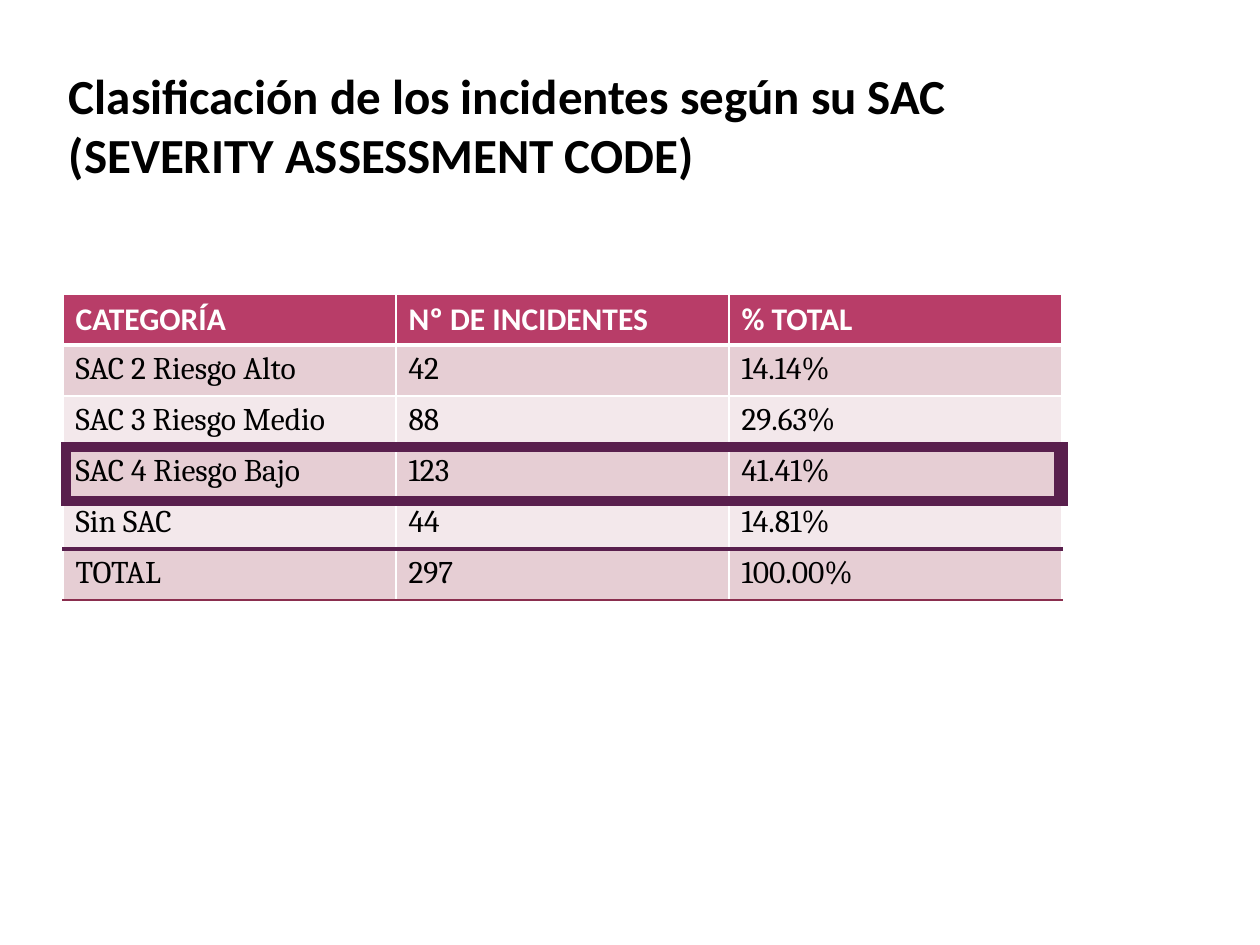
"""Build the slide that classifies incidents by Severity Assessment Code."""
from dataclasses import dataclass

from lxml.etree import SubElement
from pptx import Presentation
from pptx.dml.color import RGBColor
from pptx.oxml.ns import qn
from pptx.util import Emu, Pt

WHITE, BLACK, PLUM = "FFFFFF", "000000", "591F4D"
ROSE, PINK, PALE, WINE = "B83D68", "E6CED4", "F3E8EB", "8A2E4E"
NO_STYLE = "{2D5ABB26-0587-4C30-8999-92F81FD0307C}"


@dataclass(frozen=True)
class Border:
    color: str = WHITE
    points: int = 1


@dataclass(frozen=True)
class Row:
    texts: tuple[str, ...]
    fill: str
    bottom: Border = Border()
    font: str = "Cambria"
    color: str = BLACK
    bold: bool = False


@dataclass(frozen=True)
class Frame:
    left: int
    top: int
    width: int
    height: int
    points: int


STRONG = Border(PLUM, 3)
ROWS = (
    Row(("CATEGORÍA", "Nº DE INCIDENTES", "% TOTAL"), ROSE, Border(WHITE, 3),
        "Calibri", WHITE, True),
    Row(("SAC 2 Riesgo Alto", "42", "14.14%"), PINK),
    Row(("SAC 3 Riesgo Medio", "88", "29.63%"), PALE, STRONG),
    Row(("SAC 4 Riesgo Bajo", "123", "41.41%"), PINK, STRONG),
    Row(("Sin SAC", "44", "14.81%"), PALE, STRONG),
    Row(("TOTAL", "297", "100.00%"), PINK, Border(WINE)),
)
HIGHLIGHTS = (Frame(64, 450, 992, 48, 3), Frame(66, 447, 997, 54, 6))


def px(length: int) -> Emu:
    return Emu(round(length * 914400 / 126))


def rgb(color: str) -> RGBColor:
    return RGBColor.from_string(color)


def write(text_frame, text: str, *, size: int, font: str, color: str, bold: bool) -> None:
    paragraph = text_frame.paragraphs[0]
    run = paragraph.add_run()
    run.text = text
    run.font.size = Pt(size)
    run.font.name = font
    run.font.bold = bold
    run.font.color.rgb = rgb(color)


def set_borders(cell, left: Border, right: Border, top: Border, bottom: Border) -> None:
    properties = cell._tc.get_or_add_tcPr()
    for side, border in zip("LRTB", (left, right, top, bottom)):
        line = SubElement(properties, qn(f"a:ln{side}"), w=str(Pt(border.points)))
        SubElement(SubElement(line, qn("a:solidFill")), qn("a:srgbClr"), val=border.color)


def add_plain_table(slide, rows: int, columns: int, left: int, top: int,
                    width: int, height: int):
    table = slide.shapes.add_table(
        rows, columns, px(left), px(top), px(width), px(height)).table
    table.first_row = table.horz_banding = False
    table._tbl.tblPr.find(qn("a:tableStyleId")).text = NO_STYLE
    return table


def add_incidents(slide, rows: tuple[Row, ...]) -> None:
    columns = len(rows[0].texts)
    table = add_plain_table(slide, len(rows), columns, 63, 294,
                            333 * columns, 51 * len(rows))
    above = Border()
    for row_index, row in enumerate(rows):
        for column, text in enumerate(row.texts):
            cell = table.cell(row_index, column)
            set_borders(cell, Border(), Border(), above, row.bottom)
            cell.fill.solid()
            cell.fill.fore_color.rgb = rgb(row.fill)
            write(cell.text_frame, text, size=18, font=row.font,
                  color=row.color, bold=row.bold)
        above = row.bottom


def add_highlight(slide, frame: Frame) -> None:
    table = add_plain_table(slide, 1, 1, frame.left, frame.top, frame.width, frame.height)
    cell = table.cell(0, 0)
    set_borders(cell, *[Border(PLUM, frame.points)] * 4)
    cell.fill.background()


def add_title(slide, text: str) -> None:
    title = slide.shapes.add_textbox(px(63), px(66), px(1023), px(227)).text_frame
    title.word_wrap = True
    title.margin_left = px(6)
    title.margin_top = title.margin_right = title.margin_bottom = 0
    write(title, text, size=28, font="Calibri", color=BLACK, bold=True)


def main() -> None:
    presentation = Presentation()
    presentation.slide_width, presentation.slide_height = px(1260), px(945)
    slide = presentation.slides.add_slide(presentation.slide_layouts[6])
    add_title(slide, "Clasificación de los incidentes según su SAC "
                     "(SEVERITY ASSESSMENT CODE)")
    add_incidents(slide, ROWS)
    for frame in HIGHLIGHTS:
        add_highlight(slide, frame)
    presentation.save("out.pptx")


if __name__ == "__main__":
    main()
